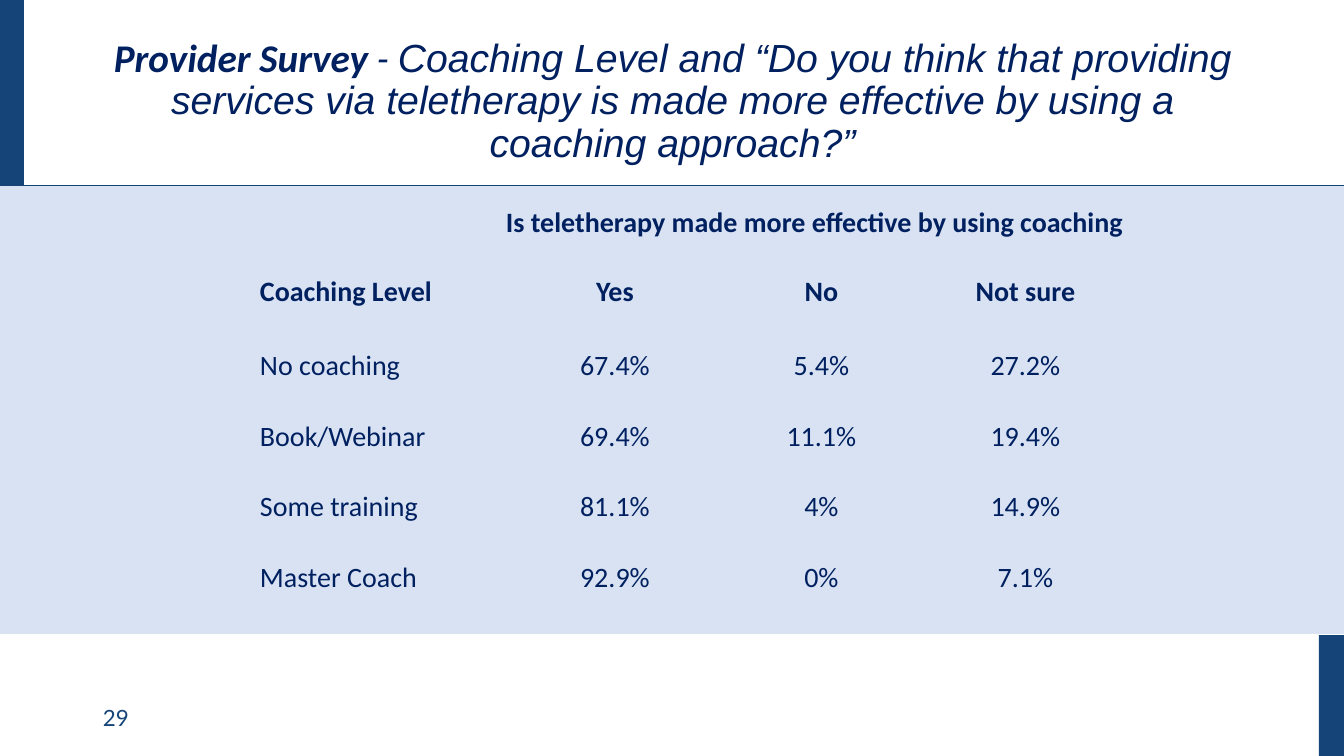
from lxml import etree
from pptx import Presentation, util as u
from pptx.dml.color import RGBColor
from pptx.enum import shapes, text
from pptx.oxml.ns import qn

NAVY = RGBColor(0x00, 0x20, 0x60)
BLUE = RGBColor(0x15, 0x45, 0x78)
PALE = RGBColor(0xD8, 0xE2, 0xF3)
PLAIN = "{2D5ABB26-0587-4C30-8999-92F81FD0307C}"

BODY = dict(name="Calibri", size=u.Pt(20), bold=False)
HEAD = dict(BODY, bold=True)
LEAD = dict(name="Calibri", size=u.Pt(28), bold=True, italic=True)
DASH = dict(LEAD, bold=False)
ASK = dict(DASH, name="Arial")
PAGE = dict(name="Lato", size=u.Pt(16))

LEFT, MID = text.PP_ALIGN.LEFT, text.PP_ALIGN.CENTER
TOP, HALF = text.MSO_ANCHOR.TOP, text.MSO_ANCHOR.MIDDLE

BARS = [
    ((0, 186, 1344, 448), PALE),
    ((0, 0, 24, 186), BLUE),
    ((1319, 635, 25, 121), BLUE),
]
TEXTS = [
    ((93, 698, 302, 40), HALF, LEFT, 1.0, BLUE, [("29", PAGE)]),
    ((93, 29, 1159, 146), HALF, MID, 0.9, NAVY, [
        ("Provider Survey", LEAD),
        (" - ", DASH),
        ("Coaching Level and “Do you think that providing services via "
         "teletherapy is made more effective by using a coaching approach?”", ASK),
    ]),
    ((478, 195, 673, 47), TOP, MID, 1.15, NAVY,
     [("Is teletherapy made more effective by using coaching", HEAD)]),
]
ROWS = [
    ("Coaching Level", "Yes", "No", "Not sure"),
    ("No coaching", "67.4%", "5.4%", "27.2%"),
    ("Book/Webinar", "69.4%", "11.1%", "19.4%"),
    ("Some training", "81.1%", "4%", "14.9%"),
    ("Master Coach", "92.9%", "0%", "7.1%"),
]
WIDE = (267, 196, 217, 191)
HIGH = (74, 71, 70, 71, 70)


def px(n):
    return u.Emu(round(n * 914400 / 100.8))


def box(at):
    return [px(n) for n in at]


def write(para, runs, align, space, color):
    para.alignment, para.line_spacing = align, space
    for words, style in runs:
        run = para.add_run()
        run.text = words
        for key, val in style.items():
            setattr(run.font, key, val)
        run.font.color.rgb = color


def main():
    deck = Presentation()
    deck.slide_width, deck.slide_height = px(1344), px(756)
    slide = deck.slides.add_slide(deck.slide_layouts[6])

    for at, color in BARS:
        bar = slide.shapes.add_shape(shapes.MSO_SHAPE.RECTANGLE, *box(at))
        bar.shadow.inherit = False
        bar.fill.solid()
        bar.fill.fore_color.rgb = color
        bar.line.fill.background()

    rule = slide.shapes.add_connector(
        shapes.MSO_CONNECTOR.STRAIGHT, *box((0, 186, 1344, 186)))
    rule.line.color.rgb = BLUE
    rule.line.width = u.Pt(0.75)
    etree.SubElement(rule.element.spPr, qn("a:effectLst"))

    for at, anchor, align, space, color, runs in TEXTS:
        frame = slide.shapes.add_textbox(*box(at)).text_frame
        frame.word_wrap = True
        frame.vertical_anchor = anchor
        write(frame.paragraphs[0], runs, align, space, color)

    grid = slide.shapes.add_table(
        len(ROWS), len(WIDE), *box((250, 260, sum(WIDE), sum(HIGH))))
    table = grid.table
    table.first_row = table.horz_banding = False
    next(grid.element.iter(qn("a:tableStyleId"))).text = PLAIN
    for col, n in zip(table.columns, WIDE):
        col.width = px(n)
    for r, row in enumerate(ROWS):
        table.rows[r].height = px(HIGH[r])
        for c, words in enumerate(row):
            cell = table.cell(r, c)
            cell.fill.background()
            for side in ("left", "top", "right", "bottom"):
                setattr(cell, "margin_" + side, px(10))
            write(cell.text_frame.paragraphs[0], [(words, BODY if r else HEAD)],
                  MID if c else LEFT, 1.15, NAVY)

    deck.save("out.pptx")


if __name__ == "__main__":
    main()
